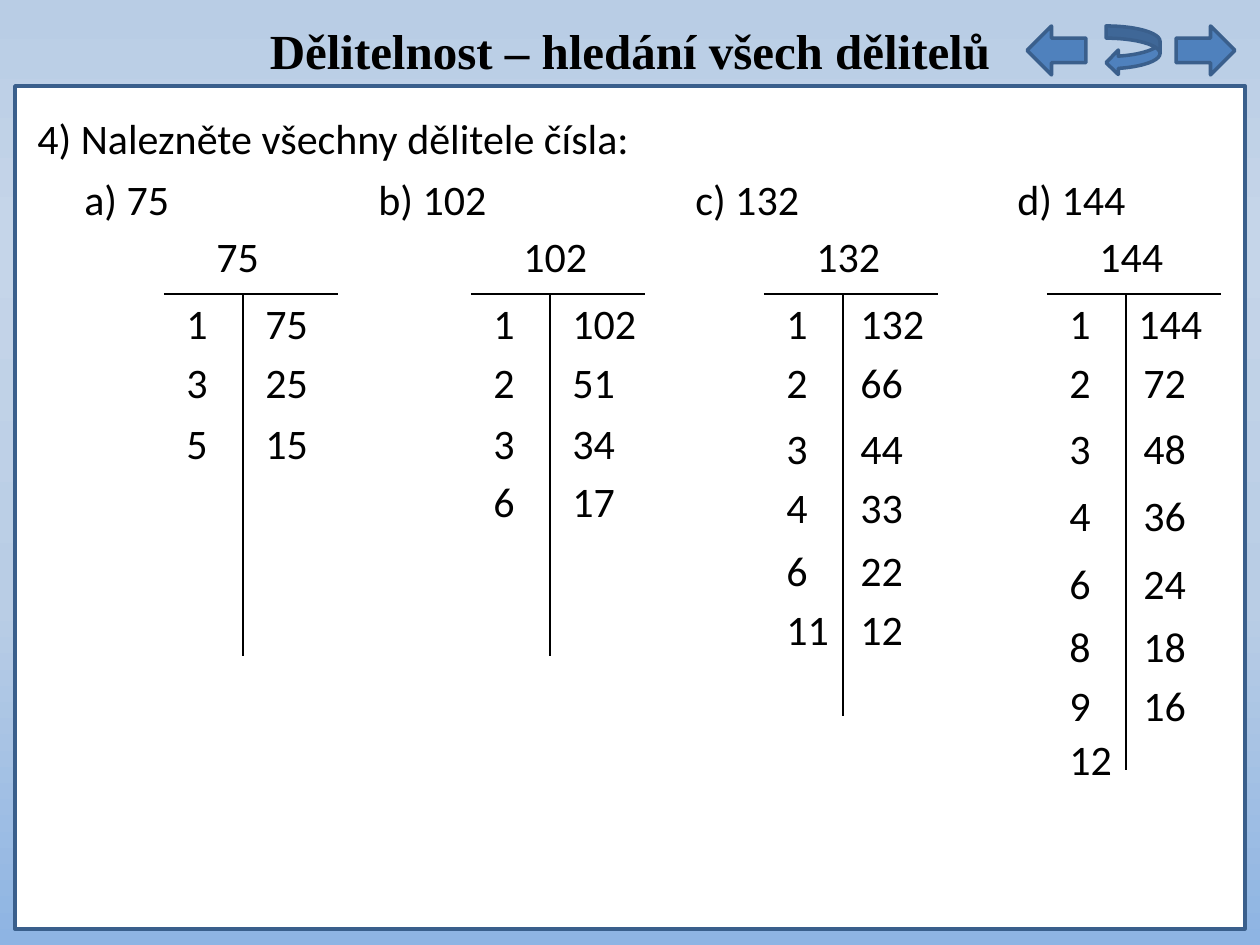
from dataclasses import dataclass

from lxml.etree import SubElement
from pptx import Presentation
from pptx.dml.color import RGBColor
from pptx.enum.shapes import MSO_CONNECTOR as Conn, MSO_SHAPE as Shape
from pptx.enum.text import MSO_AUTO_SIZE as AutoSize, PP_ALIGN as Align
from pptx.oxml.ns import qn
from pptx.util import Emu, Pt

EMU_PER_PX = 914400 / 126

BLACK = RGBColor(0x00, 0x00, 0x00)
WHITE = RGBColor(0xFF, 0xFF, 0xFF)
BLUE = RGBColor(0x4F, 0x81, 0xBD)
EDGE = RGBColor(0x3A, 0x5F, 0x8C)
SKY = RGBColor(0xB9, 0xCD, 0xE5)
PALE = RGBColor(0xC5, 0xD5, 0xE9)
DEEP = RGBColor(0x8E, 0xB4, 0xE3)
BACKGROUND = [(0, SKY), (25, PALE), (64, SKY), (100, DEEP)]

BODY = {"name": "Calibri", "size": Pt(24), "bold": False}
TITLE = {"name": "Times New Roman", "size": Pt(28), "bold": True}

# Divisor table geometry, offsets from the left end of its bar
BAR_Y, BAR_W, STEM_DX = 294, 174, 79
HEAD_DX, HEAD_Y, LEFT_DX = 40, 224, 10
CELL_W, CELL_H = 100, 63


@dataclass(frozen=True)
class DivisorTable:
    number: str
    label: str
    label_tab: int
    x: int
    right_dx: int
    stem_end: int
    row_ys: tuple[int, ...]
    pairs: tuple[tuple[str, str], ...]


TABLES = [
    DivisorTable("75", "a)", 47, 164, 89, 656, (291, 350, 411),
                 (("1", "75"), ("3", "25"), ("5", "15"))),
    DivisorTable("102", "b)", 341, 471, 89, 656, (291, 350, 411, 469),
                 (("1", "102"), ("2", "51"), ("3", "34"), ("6", "17"))),
    DivisorTable("132", "c)", 658, 764, 84, 716, (291, 350, 416, 475, 538, 597),
                 (("1", "132"), ("2", "66"), ("3", "44"),
                  ("4", "33"), ("6", "22"), ("11", "12"))),
    DivisorTable("144", "d)", 980, 1047, 84, 770,
                 (291, 350, 416, 483, 551, 614, 673, 727),
                 (("1", "144"), ("2", "72"), ("3", "48"), ("4", "36"),
                  ("6", "24"), ("8", "18"), ("9", "16"), ("12", ""))),
]


@dataclass(frozen=True)
class Block:
    kind: Shape
    box: tuple[int, int, int, int]
    fill: RGBColor


PANEL = Block(Shape.RECTANGLE, (15, 86, 1230, 843), WHITE)
NAVIGATION = [
    Block(Shape.RIGHT_ARROW, (1176, 26, 59, 49), BLUE),
    Block(Shape.LEFT_ARROW, (1027, 26, 59, 49), BLUE),
    Block(Shape.CURVED_LEFT_ARROW, (1106, 26, 54, 49), BLUE),
]


def px(n: int) -> Emu:
    return Emu(round(n * EMU_PER_PX))


def set_background(s) -> None:
    fill = s.background.fill
    fill.gradient()
    fill.gradient_angle = 270
    stops = s.element.find(".//" + qn("a:gsLst"))
    for old in list(stops):
        stops.remove(old)
    for pos, color in BACKGROUND:
        stop = SubElement(stops, qn("a:gs"), pos=str(pos * 1000))
        SubElement(stop, qn("a:srgbClr"), val=str(color))


def add_block(s, block: Block) -> None:
    sp = s.shapes.add_shape(block.kind, *map(px, block.box))
    sp.shadow.inherit = False
    sp.fill.solid()
    sp.fill.fore_color.rgb = block.fill
    sp.line.color.rgb = EDGE
    sp.line.width = Pt(2)


def add_rule(s, x1: int, y1: int, x2: int, y2: int) -> None:
    line = s.shapes.add_connector(Conn.STRAIGHT, *map(px, (x1, y1, x2, y2)))
    line.line.color.rgb = BLACK
    line.line.width = Pt(1.5)
    SubElement(line._element.spPr, qn("a:effectLst"))


def write(p, text: str, font: dict) -> None:
    r = p.add_run()
    r.text = text
    r.font.color.rgb = BLACK
    for name, value in font.items():
        setattr(r.font, name, value)


def add_frame(s, x: int, y: int, w: int, h: int, auto_size: AutoSize):
    tf = s.shapes.add_textbox(*map(px, (x, y, w, h))).text_frame
    tf.word_wrap = True
    tf.auto_size = auto_size
    return tf


def add_cell(s, x: int, y: int, text: str) -> None:
    tf = add_frame(s, x, y, CELL_W, CELL_H, AutoSize.SHAPE_TO_FIT_TEXT)
    write(tf.paragraphs[0], text, BODY)


def add_title(s, text: str) -> None:
    p = add_frame(s, 15, 14, 1230, 72, AutoSize.SHAPE_TO_FIT_TEXT).paragraphs[0]
    p.alignment = Align.CENTER
    write(p, text, TITLE)


def add_task(s, text: str) -> None:
    tf = add_frame(s, 25, 106, 1211, 525, AutoSize.NONE)
    question, labels = tf.paragraphs[0], tf.add_paragraph()
    question.space_after, labels.space_after = Pt(6), Pt(12)
    write(question, text, BODY)
    # One tab stop per label
    tabs = SubElement(labels._p.get_or_add_pPr(), qn("a:tabLst"))
    for t in TABLES:
        SubElement(tabs, qn("a:tab"), pos=str(px(t.label_tab)), algn="l")
    write(labels, "".join(f"\t{t.label} {t.number}" for t in TABLES), BODY)


def add_divisor_table(s, t: DivisorTable) -> None:
    stem_x = t.x + STEM_DX
    add_rule(s, t.x, BAR_Y, t.x + BAR_W, BAR_Y)
    add_rule(s, stem_x, BAR_Y, stem_x, t.stem_end)
    add_cell(s, t.x + HEAD_DX, HEAD_Y, t.number)
    for y, (left, right) in zip(t.row_ys, t.pairs):
        add_cell(s, t.x + LEFT_DX, y, left)
        if right:
            # The widest number of the last table sits tight against the stem
            tight = right == "144"
            add_cell(s, stem_x if tight else t.x + t.right_dx, y, right)


def main() -> None:
    prs = Presentation()
    prs.slide_width, prs.slide_height = px(1260), px(945)
    s = prs.slides.add_slide(prs.slide_layouts[6])
    set_background(s)

    # Panel and headings
    add_block(s, PANEL)
    add_title(s, "Dělitelnost – hledání všech dělitelů")
    add_task(s, "4) Nalezněte všechny dělitele čísla:")

    # Divisor tables
    for t in TABLES:
        add_divisor_table(s, t)

    # Navigation arrows
    for block in NAVIGATION:
        add_block(s, block)

    prs.save("out.pptx")


if __name__ == "__main__":
    main()
